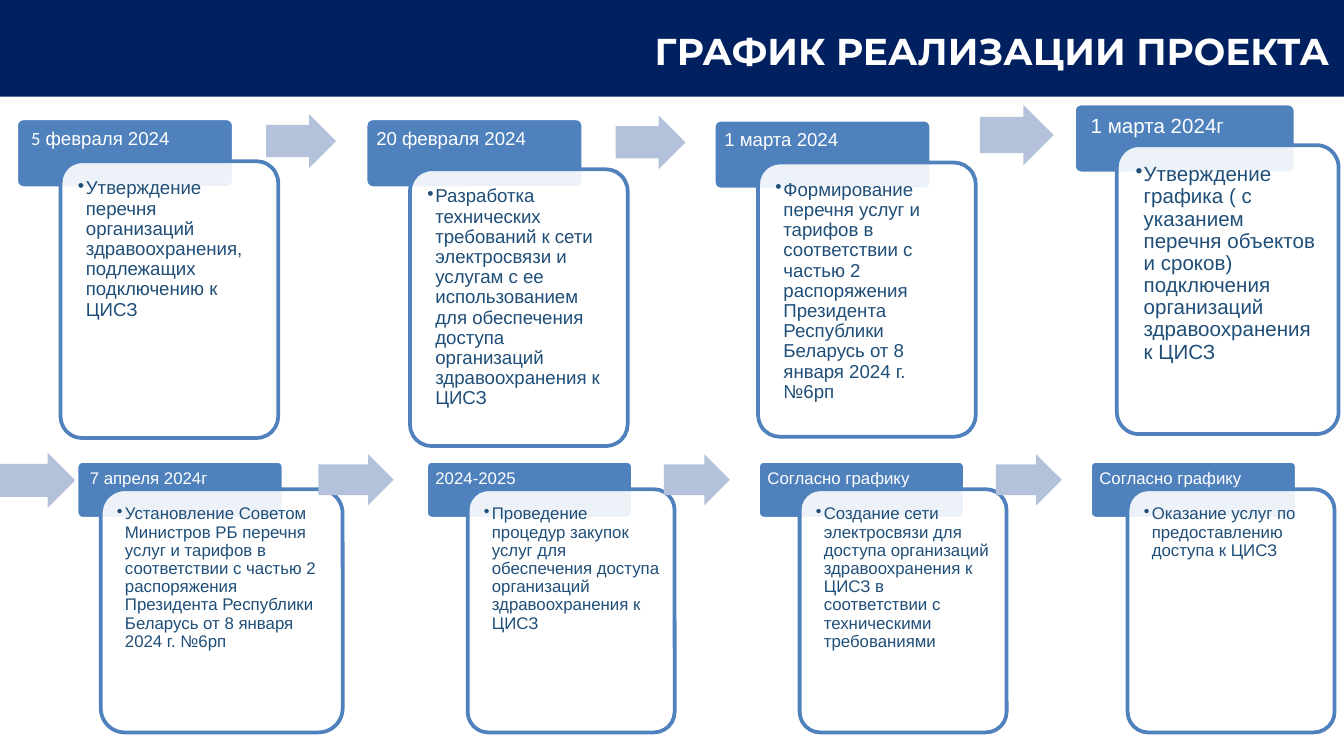
from lxml import etree
from pptx import Presentation
from pptx.dml.color import RGBColor
from pptx.enum.shapes import MSO_SHAPE
from pptx.enum.text import PP_ALIGN
from pptx.oxml.ns import qn
from pptx.util import Pt

RECT, ROUND, ARROW = MSO_SHAPE.RECTANGLE, MSO_SHAPE.ROUNDED_RECTANGLE, MSO_SHAPE.RIGHT_ARROW
RIGHT = PP_ALIGN.RIGHT
PX = 9144  # 100 px to the inch
NAVY, BLUE, PALE, INK, WHITE = "002060", "4F81BD", "B3C1DB", "1F4E78", "FFFFFF"
hue = RGBColor.from_string

deck = Presentation()
deck.slide_width = 1000 * PX
deck.slide_height = deck.slide_width * 9 // 16
slide = deck.slides.add_slide(deck.slide_layouts[6])


def draw(kind, box, fill, line=None, adj=()):
    shape = slide.shapes.add_shape(kind, *[n * PX for n in box])
    shape.shadow.inherit = False
    shape.fill.solid()
    shape.fill.fore_color.rgb = hue(fill)
    if line:
        shape.line.color.rgb = hue(line)
        shape.line.width = Pt(2)
    else:
        shape.line.fill.background()
    for i, part in enumerate(adj):
        shape.adjustments[i] = part
    return shape


def write(box, runs, size, color, pads, font="Arial", space=0.9, bullet=False):
    frame = slide.shapes.add_textbox(*[n * PX for n in box]).text_frame
    frame.word_wrap = True
    side, top, base = pads
    frame.margin_left = frame.margin_right = side * PX
    frame.margin_top, frame.margin_bottom = top * PX, base * PX
    para = frame.paragraphs[0]
    para.line_spacing = space
    if bullet:
        props = para._p.get_or_add_pPr()
        props.set("marL", str(6 * PX))
        props.set("indent", str(-6 * PX))
        etree.SubElement(props, qn("a:buChar")).set("char", "•")
    para.font.size, para.font.name = Pt(size), font
    para.font.color.rgb = hue(color)
    for text in runs:
        para.add_run().text = text
    return para


# Header
draw(RECT, (0, 0, 1000, 72), NAVY)
title = write((232, 16, 767, 44), ["ГРАФИК РЕАЛИЗАЦИИ ПРОЕКТА"], 20, WHITE,
              (10, 5, 5), "Montserrat", 1)
title.font.bold = True
title.alignment = RIGHT

# Text size: tag width, tag height, text padding
looks = {9: (154, 43, 7), 10: (162, 52, 8), 11: (165, 52, 9)}

# Steps: text size, tag corner, card box, arrow box, Calibri lead, date, task
steps = [
    (10, (12, 88), (45, 120, 162, 206), (198, 85, 52, 40), " 5", " февраля 2024",
     "Утверждение перечня организаций здравоохранения, подлежащих подключению к ЦИСЗ"),
    (10, (272, 88), (305, 126, 162, 206), (458, 86, 52, 40), "", "20 февраля 2024",
     "Разработка технических требований к сети электросвязи и услугам с ее "
     "использованием для обеспечения доступа организаций здравоохранения к ЦИСЗ"),
    (10, (531, 89), (564, 121, 162, 204), (729, 78, 55, 45), "", "1 марта 2024",
     "Формирование перечня услуг и тарифов в соответствии с частью 2 распоряжения "
     "Президента Республики Беларусь от 8 января 2024 г. №6рп"),
    (11, (799, 77), (831, 108, 165, 215), (-1, 337, 57, 41), " ", "1 марта 2024г",
     "Утверждение графика ( с указанием перечня объектов и сроков) подключения "
     "организаций здравоохранения к ЦИСЗ"),
    (9, (57, 343), (75, 364, 180, 181), (237, 338, 56, 38), " ", "7 апреля 2024г",
     "Установление Советом Министров РБ перечня услуг и тарифов в соответствии с частью 2 "
     "распоряжения Президента Республики Беларусь от 8 января 2024 г. №6рп"),
    (9, (317, 343), (348, 364, 154, 181), (494, 338, 49, 38), "", "2024-2025",
     "Проведение процедур закупок услуг для обеспечения доступа организаций "
     "здравоохранения к ЦИСЗ"),
    (9, (564, 343), (595, 364, 154, 181), (741, 338, 49, 38), "", "Согласно графику",
     "Создание сети электросвязи для доступа организаций здравоохранения к ЦИСЗ "
     "в соответствии с техническими требованиями"),
    (9, (811, 343), (839, 364, 154, 181), None, "", "Согласно графику",
     "Оказание услуг по предоставлению доступа к ЦИСЗ"),
]

for size, (x, y), card, arrow, lead, date, task in steps:
    wide, high, pad = looks[size]

    # Date tag
    draw(ROUND, (x, y, wide, high), BLUE, WHITE, [0.1])
    label = write((x, y, wide, high * 2 // 3), [t for t in (lead, date) if t], size, WHITE,
                  (pad, pad, pad // 2))
    if lead:
        label.runs[0].font.name = "Calibri"

    # Task card, slightly see-through
    panel = draw(ROUND, card, WHITE, BLUE, [0.1])
    tint = panel.fill._xPr.find(".//" + qn("a:srgbClr"))
    etree.SubElement(tint, qn("a:alpha")).set("val", "90000")
    left, top, width, height = card
    write((left + 5, top + 5, width - 9, height - 9), [task], size, INK,
          (pad, pad, pad), bullet=True)

    # Arrow to the next step
    if arrow:
        draw(ARROW, arrow, PALE, adj=[0.6, 0.5])

deck.save("out.pptx")
